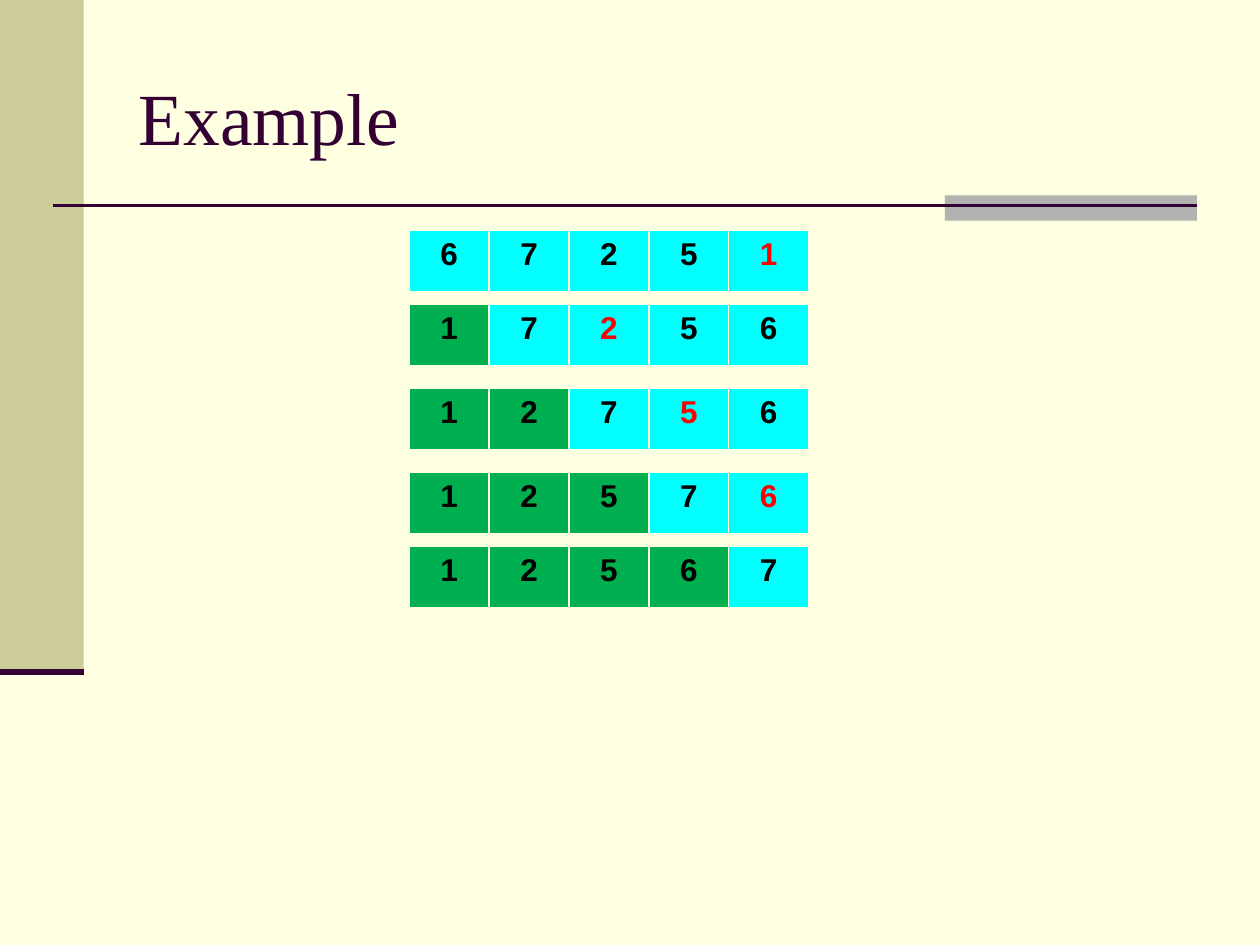
from lxml.etree import SubElement
from pptx import Presentation
from pptx.dml.color import RGBColor
from pptx.enum.shapes import MSO_CONNECTOR, MSO_SHAPE
from pptx.enum.text import MSO_ANCHOR, PP_ALIGN
from pptx.oxml.ns import qn
from pptx.util import Cm, Pt

CREAM = RGBColor(0xFF, 0xFF, 0xE1)
KHAKI = RGBColor(0xCC, 0xCC, 0x99)
GRAY = RGBColor(0xB2, 0xB2, 0xB2)
PLUM = RGBColor(0x33, 0x00, 0x33)
CYAN = RGBColor(0x00, 0xFF, 0xFF)
GREEN = RGBColor(0x00, 0xB0, 0x50)
BLACK = RGBColor(0x00, 0x00, 0x00)
RED = RGBColor(0xFF, 0x00, 0x00)

NUMBERS = [6, 7, 2, 5, 1]
STAGE_TOPS = [4.65, 6.14, 7.83, 9.53, 11.01]
STAGE_LEFT, CELL_WIDTH, CELL_HEIGHT = 8.25, 1.61, 1.27
BORDERS = {"a:lnL": 1, "a:lnR": 1, "a:lnT": 1, "a:lnB": 3}


def write_text(frame, text, *, font, size, color, bold=False, align=PP_ALIGN.LEFT):
    paragraph = frame.paragraphs[0]
    paragraph.alignment = align
    span = paragraph.add_run()
    span.text = text
    span.font.name = font
    span.font.size = Pt(size)
    span.font.bold = bold
    span.font.color.rgb = color


def add_block(page, left, top, width, height, color):
    block = page.shapes.add_shape(
        MSO_SHAPE.RECTANGLE, Cm(left), Cm(top), Cm(width), Cm(height))
    block.shadow.inherit = False
    block.fill.solid()
    block.fill.fore_color.rgb = color
    block.line.fill.background()


def add_rule(page, left, right, top, weight):
    rule = page.shapes.add_connector(
        MSO_CONNECTOR.STRAIGHT, Cm(left), Cm(top), Cm(right), Cm(top))
    rule.line.color.rgb = PLUM
    rule.line.width = Pt(weight)
    SubElement(rule._element.spPr, qn("a:effectLst"))


def set_borders(cell):
    properties = cell._tc.get_or_add_tcPr()
    for tag, weight in BORDERS.items():
        border = SubElement(properties, qn(tag), w=str(Pt(weight)))
        fill = SubElement(border, qn("a:solidFill"))
        SubElement(fill, qn("a:srgbClr"), val=str(CREAM))


def add_stage(page, top, numbers, sorted_count, marked):
    """One row of numbers: sorted cells green, the next minimum in red."""
    count = len(numbers)
    table = page.shapes.add_table(
        1, count, Cm(STAGE_LEFT), Cm(top),
        Cm(CELL_WIDTH * count), Cm(CELL_HEIGHT)).table
    table.first_row = table.horz_banding = False
    for index, number in enumerate(numbers):
        table.columns[index].width = Cm(CELL_WIDTH)
        cell = table.cell(0, index)
        set_borders(cell)
        cell.fill.solid()
        cell.fill.fore_color.rgb = GREEN if index < sorted_count else CYAN
        write_text(cell.text_frame, str(number), font="Arial", size=18, bold=True,
                   color=RED if index == marked else BLACK, align=PP_ALIGN.CENTER)


def add_title(page, text):
    title = page.shapes.title
    title.left, title.top, title.width, title.height = (
        Cm(2.54), Cm(0.76), Cm(21.59), Cm(3.18))
    title.text_frame.vertical_anchor = MSO_ANCHOR.MIDDLE
    write_text(title.text_frame, text, font="Times New Roman", size=42, color=PLUM)


def main():
    deck = Presentation()
    deck.slide_width, deck.slide_height = Cm(25.4), Cm(19.05)
    page = deck.slides.add_slide(deck.slide_layouts[5])
    page.background.fill.solid()
    page.background.fill.fore_color.rgb = CREAM

    # Side band, accent bar and rules
    add_block(page, 0, 0, 1.69, 13.55, KHAKI)
    add_block(page, 19.05, 3.94, 5.08, 0.51, GRAY)
    add_rule(page, 1.06, 24.13, 4.14, 1.5)
    add_rule(page, 0, 1.69, 13.55, 3.5)
    add_title(page, "Example")

    # Selection sort: each stage swaps the marked minimum into place
    numbers = list(NUMBERS)
    for step, top in enumerate(STAGE_TOPS):
        smallest = numbers.index(min(numbers[step:]))
        finished = step == len(numbers) - 1
        add_stage(page, top, numbers, step, None if finished else smallest)
        numbers[step], numbers[smallest] = numbers[smallest], numbers[step]

    deck.save("out.pptx")


if __name__ == "__main__":
    main()
